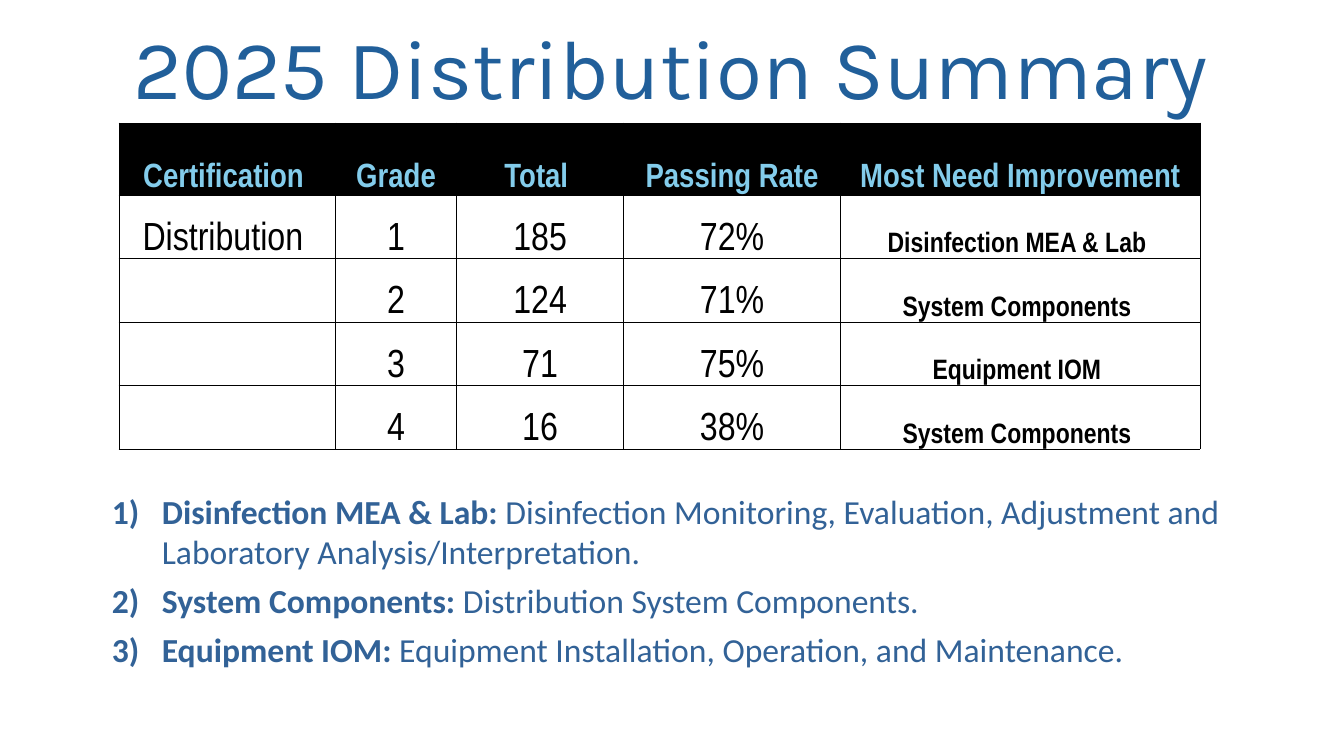
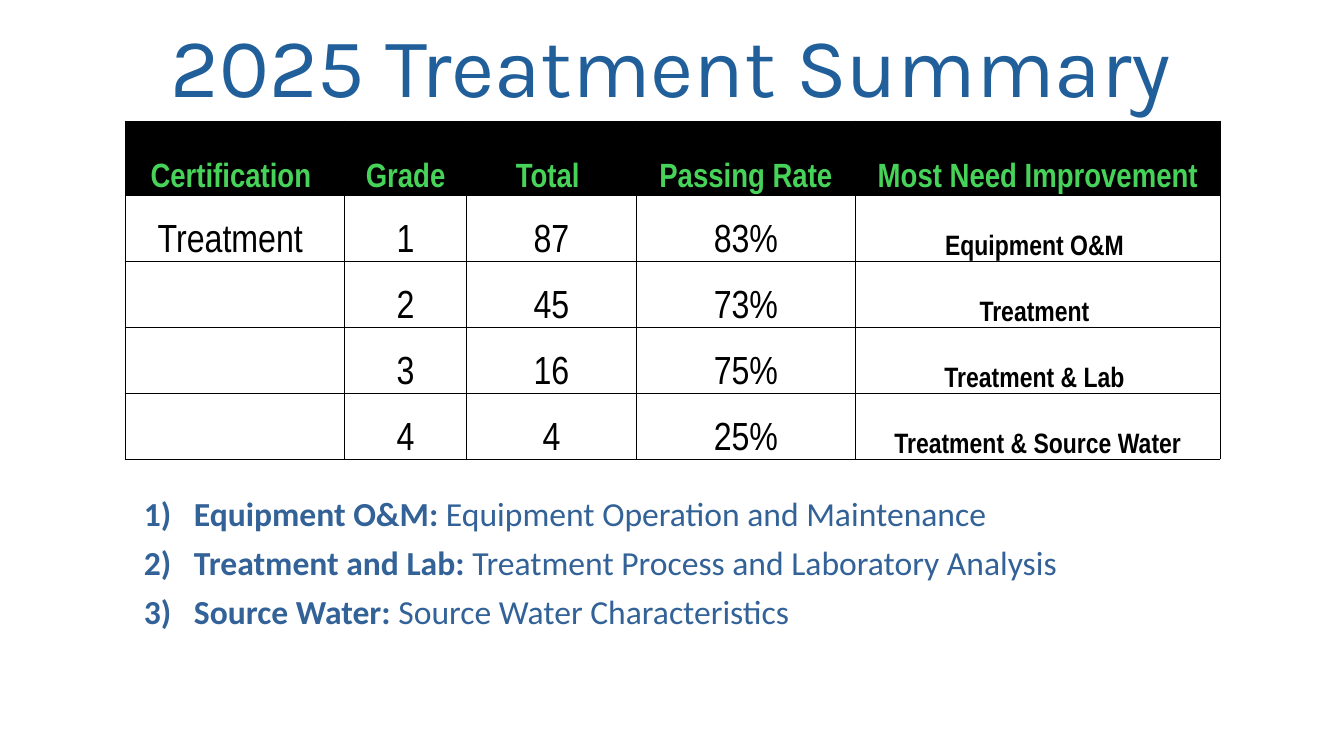
"""Build two exam summary slides, each with a title, a table and numbered notes."""
from lxml.etree import SubElement as Sub
from pptx import Presentation
from pptx.dml.color import RGBColor
from pptx.enum.text import MSO_ANCHOR as Anchor, PP_ALIGN as Align
from pptx.oxml import parse_xml
from pptx.oxml.ns import nsdecls, qn
from pptx.util import Emu, Pt

INK, TITLE, NOTE = "000000", "215F9A", "326297"
HEADS = ["Certification ", "Grade", "Total ", "Passing Rate", "Most Need Improvement"]
SHARES = [215, 120, 166, 215, 357]
SLIDES = [
    {
        "title": "2025 Distribution Summary", "top": 14, "accent": "83CCEB",
        "table": (119, 123, 1081, 326), "head": 72, "notes at": (102, 486),
        "rows": [
            ["Distribution ", "1", "185", "72%", "Disinfection MEA & Lab "],
            ["", "2", "124", "71%", "System Components "],
            ["", "3", "71", "75%", "Equipment IOM "],
            ["", "4", "16", "38%", "System Components "],
        ],
        "notes": [
            ("Disinfection MEA & Lab:", " Disinfection Monitoring, Evaluation, "
             "Adjustment and Laboratory Analysis/Interpretation."),
            ("System Components: ", "Distribution System Components."),
            ("Equipment IOM: ", "Equipment Installation, Operation, and Maintenance."),
        ],
    },
    {
        "title": "2025 Treatment Summary", "top": 12, "accent": "47D359",
        "table": (125, 121, 1095, 338), "head": 74, "notes at": (134, 488),
        "rows": [
            ["Treatment ", "1", "87", "83%", "Equipment O&M "],
            ["", "2", "45", "73%", "Treatment "],
            ["", "3", "16", "75%", "Treatment & Lab "],
            ["", "4", "4", "25%", "Treatment & Source Water"],
        ],
        "notes": [
            ("Equipment O&M:", " Equipment Operation and Maintenance"),
            ("Treatment and Lab: ", "Treatment Process and Laboratory Analysis"),
            ("Source Water: ", "Source Water Characteristics"),
        ],
    },
]


def px(n):
    return Emu(round(n * 914400 / 100.8))


def style(font, name, size, color, bold=False):
    font.name, font.size, font.bold = name, Pt(size), bold
    font.color.rgb = RGBColor.from_string(color)


def add_box(slide, *place):
    frame = slide.shapes.add_textbox(*map(px, place)).text_frame
    frame.word_wrap = True
    return frame


def add_title(slide, text, top):
    frame = add_box(slide, 41, top, 1260, 109)
    frame.vertical_anchor = Anchor.BOTTOM
    para = frame.paragraphs[0]
    para.text, para.alignment, para.line_spacing = text, Align.CENTER, 0.9
    style(para.runs[0].font, "Karla", 60, TITLE)


def add_edges(cell):
    props = cell._tc.get_or_add_tcPr()
    for i, side in enumerate("LRTB"):
        props.insert(i, parse_xml(
            f'<a:ln{side} {nsdecls("a")} w="{Pt(0.5)}"><a:solidFill>'
            f'<a:srgbClr val="{INK}"/></a:solidFill></a:ln{side}>'))


def fill_cell(cell, text, size, color, bold, is_head):
    cell.margin_left = cell.margin_right = cell.margin_top = px(1)
    cell.margin_bottom = 0
    cell.vertical_anchor = Anchor.BOTTOM
    if is_head:
        cell.fill.solid()
        cell.fill.fore_color.rgb = RGBColor.from_string(INK)
    else:
        cell.fill.background()
    add_edges(cell)
    if text:
        para = cell.text_frame.paragraphs[0]
        para.text, para.alignment = text, Align.CENTER
        style(para.runs[0].font, "Arial Narrow", size, color, bold)


def add_grid(slide, place, head, body, accent):
    rows = [HEADS] + body
    table = slide.shapes.add_table(len(rows), len(HEADS), *map(px, place)).table
    table.first_row = table.horz_banding = False
    for col, share in zip(table.columns, SHARES):
        col.width = px(place[2] * share / sum(SHARES))
    for r, row in enumerate(rows):
        table.rows[r].height = px((place[3] - head) / len(body) if r else head)
        for c, text in enumerate(row):
            last = c == len(HEADS) - 1
            look = (20 if last else 28, INK, last) if r else (24, accent, True)
            fill_cell(table.cell(r, c), text, *look, r == 0)


def add_notes(slide, spot, notes):
    frame = add_box(slide, *spot, 1200, 200)
    for i, (term, text) in enumerate(notes):
        para = frame.add_paragraph() if i else frame.paragraphs[0]
        props = para._p.get_or_add_pPr()
        props.set("marL", str(px(50)))
        props.set("indent", str(px(-50)))
        Sub(props, qn("a:buFont"), typeface="+mj-lt")
        Sub(props, qn("a:buAutoNum"), type="arabicParenR")
        para.space_before = Pt(6 if i else 0)
        for part, bold in ((term, True), (text, False)):
            run = para.add_run()
            run.text = part
            style(run.font, "Calibri", 24, NOTE, bold)


def main():
    deck = Presentation()
    deck.slide_width, deck.slide_height = px(1344), px(756)
    for data in SLIDES:
        slide = deck.slides.add_slide(deck.slide_layouts[6])
        add_title(slide, data["title"], data["top"])
        add_grid(slide, data["table"], data["head"], data["rows"], data["accent"])
        add_notes(slide, data["notes at"], data["notes"])
    deck.save("out.pptx")


if __name__ == "__main__":
    main()
